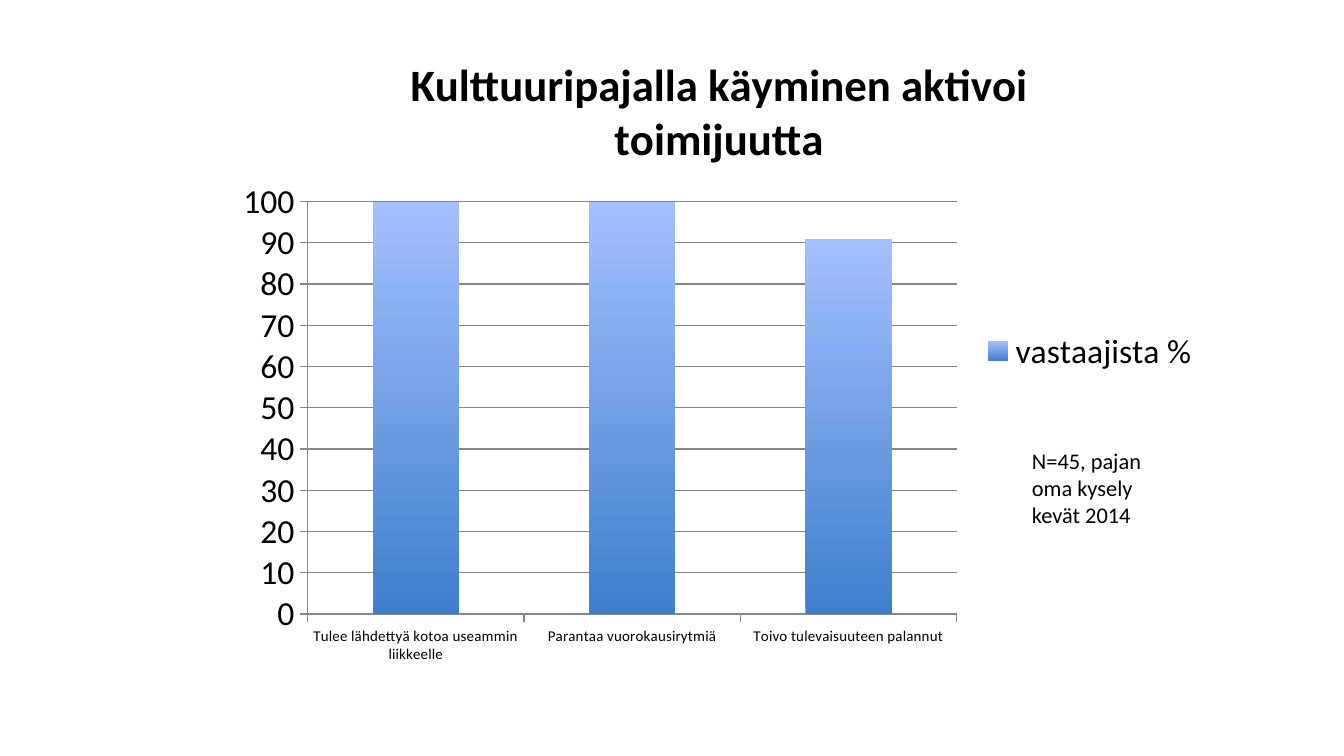
from pptx import Presentation
from pptx.chart.data import CategoryChartData
from pptx.dml.color import RGBColor
from pptx.enum.chart import XL_CHART_TYPE as ChartType
from pptx.enum.chart import XL_LEGEND_POSITION as LegendPosition
from pptx.enum.chart import XL_TICK_MARK as TickMark
from pptx.enum.text import MSO_AUTO_SIZE as AutoSize
from pptx.oxml.ns import qn
from pptx.util import Inches, Pt
from lxml.etree import SubElement

FONT = "Calibri"
BLACK = RGBColor(0x00, 0x00, 0x00)
GREY = RGBColor(0x86, 0x86, 0x86)
DARK_BLUE = RGBColor(0x3E, 0x7F, 0xCD)
LIGHT_BLUE = RGBColor(0xA3, 0xC0, 0xFF)

TITLE = "Kulttuuripajalla käyminen aktivoi toimijuutta"
SERIES = "vastaajista %"
ANSWERS = {
    "Tulee lähdettyä kotoa useammin liikkeelle": 100,
    "Parantaa vuorokausirytmiä": 100,
    "Toivo tulevaisuuteen palannut": 91,
}
NOTE = "N=45, pajan oma kysely kevät 2014"


def format_font(font, size, bold=False):
    font.name = FONT
    font.size = Pt(size)
    font.bold = bold
    font.color.rgb = BLACK


def add_text(frame, text, size, bold=False):
    para = frame.paragraphs[0]
    format_font(para.font, size, bold)
    span = para.add_run()
    span.text = text
    format_font(span.font, size, bold)


def format_line(line):
    line.color.rgb = GREY
    line.width = Pt(0.75)


def format_axis(axis, size):
    axis.major_tick_mark = TickMark.OUTSIDE
    axis.minor_tick_mark = TickMark.NONE
    format_line(axis.format.line)
    format_font(axis.tick_labels.font, size)


def fill_bars(series):
    fill = series.format.fill
    fill.gradient()
    fill.gradient_angle = 90
    for stop, color in zip(fill.gradient_stops, (DARK_BLUE, LIGHT_BLUE)):
        stop.color.rgb = color
    series.format.line.fill.background()
    series.invert_if_negative = False


def place_plot(chart, **fractions):
    area = chart.element.find(".//" + qn("c:plotArea"))
    for old in area.findall(qn("c:layout")):
        area.remove(old)
    layout = SubElement(area, qn("c:layout"))
    area.insert(0, layout)
    manual = SubElement(layout, qn("c:manualLayout"))
    settings = {"layoutTarget": "inner", "xMode": "edge", "yMode": "edge", **fractions}
    for name, value in settings.items():
        SubElement(manual, qn("c:" + name)).set("val", str(value))


def add_answer_chart(page, left, top, width, height):
    data = CategoryChartData()
    data.categories = list(ANSWERS)
    data.add_series(SERIES, list(ANSWERS.values()))
    chart = page.shapes.add_chart(
        ChartType.COLUMN_CLUSTERED, left, top, width, height, data
    ).chart
    format_font(chart.font, 18)

    chart.has_title = True
    add_text(chart.chart_title.text_frame, TITLE, 24, bold=True)
    chart.chart_title.include_in_layout = False

    chart.has_legend = True
    chart.legend.position = LegendPosition.RIGHT
    chart.legend.include_in_layout = False
    format_font(chart.legend.font, 18)

    format_axis(chart.category_axis, 8)
    values = chart.value_axis
    format_axis(values, 18)
    values.minimum_scale = 0
    values.maximum_scale = 100
    values.major_unit = 10
    values.has_major_gridlines = True
    format_line(values.major_gridlines.format.line)

    plot = chart.plots[0]
    plot.gap_width = 150
    plot.vary_by_categories = False
    fill_bars(plot.series[0])
    place_plot(
        chart,
        x=round(Inches(0.62) / width, 4),
        y=round(Inches(1.31) / height, 4),
        w=round(Inches(4.83) / width, 4),
        h=round(Inches(3.07) / height, 4),
    )


def add_note(page, left, top, width, height):
    box = page.shapes.add_textbox(left, top, width, height)
    frame = box.text_frame
    frame.word_wrap = True
    frame.auto_size = AutoSize.SHAPE_TO_FIT_TEXT
    add_text(frame, NOTE, 12)


def main():
    deck = Presentation()
    deck.slide_width = Inches(10)
    deck.slide_height = deck.slide_width * 9 // 16
    page = deck.slides.add_slide(deck.slide_layouts[6])
    add_answer_chart(page, Inches(1.67), Inches(0.19), Inches(7.36), Inches(4.85))
    add_note(page, Inches(7.58), Inches(3.28), Inches(1.14), Inches(0.71))
    deck.save("out.pptx")


if __name__ == "__main__":
    main()
